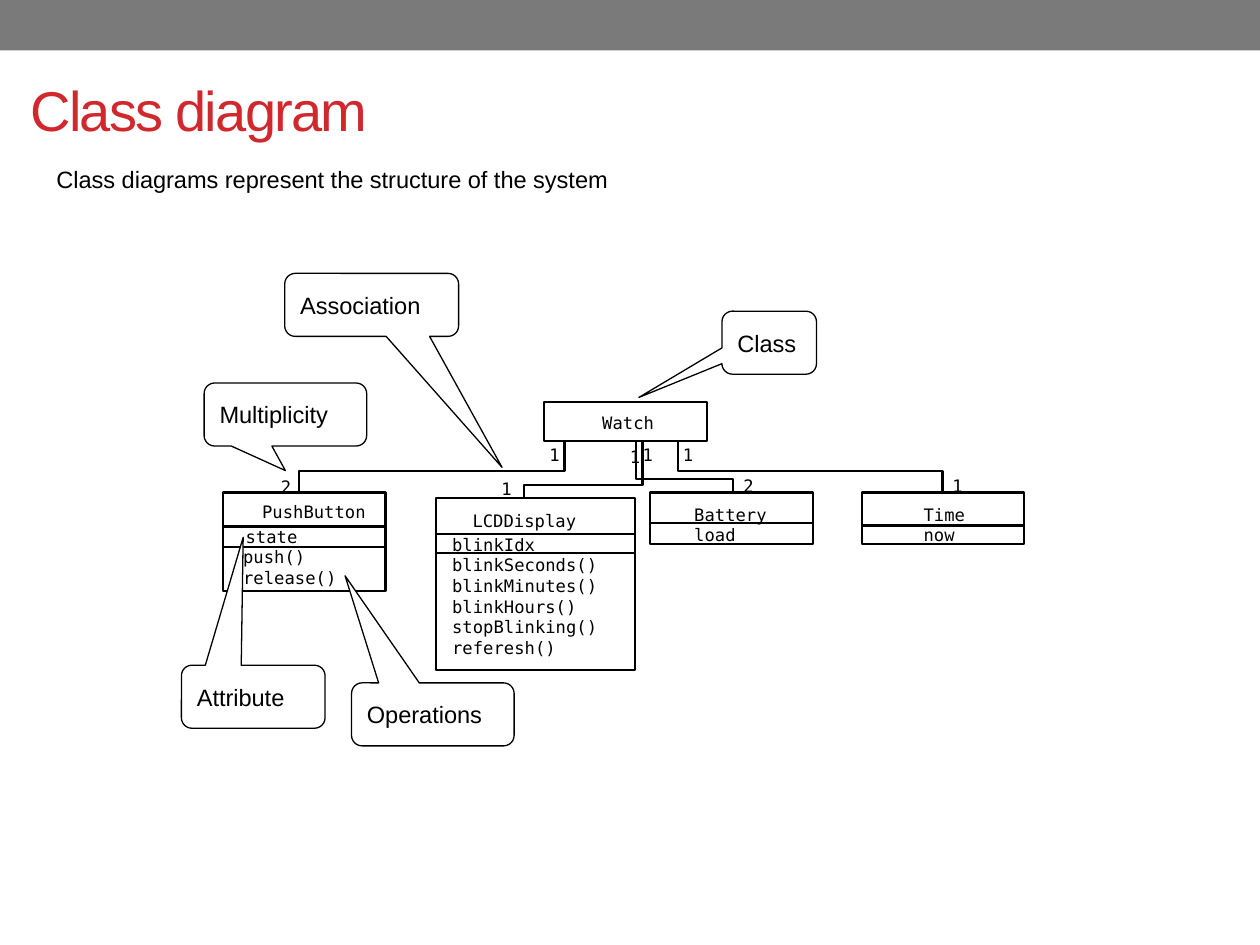
from itertools import pairwise

from pptx import Presentation
from pptx.dml.color import RGBColor
from pptx.enum.shapes import MSO_SHAPE
from pptx.enum.text import MSO_ANCHOR, MSO_AUTO_SIZE, PP_ALIGN
from pptx.util import Cm, Pt

RECTANGLE = MSO_SHAPE.RECTANGLE
CALLOUT = MSO_SHAPE.ROUNDED_RECTANGULAR_CALLOUT
MIDDLE, TOP = MSO_ANCHOR.MIDDLE, MSO_ANCHOR.TOP
LEFT = PP_ALIGN.LEFT
FIT_SHAPE, NO_FIT = MSO_AUTO_SIZE.SHAPE_TO_FIT_TEXT, MSO_AUTO_SIZE.NONE
SANS, MONO = "Arial", "DejaVu Sans Mono"
BLACK, WHITE, GREY, RED = "000000", "FFFFFF", "7A7A7A", "D1282E"

# Content; all places are in inches
TITLE = "Class diagram"
SUBTITLE = "Class diagrams represent the structure of the system"

# Class boxes: left, width, top and bottom edges of the compartments
CLASSES = [
    (4.32, 1.29, [3.19, 3.5]),               # Watch
    (1.77, 1.29, [3.91, 4.18, 4.34, 4.69]),  # PushButton
    (3.46, 1.58, [3.95, 4.24, 4.39, 5.32]),  # LCDDisplay
    (5.16, 1.29, [3.91, 4.15, 4.32]),        # Battery
    (6.84, 1.29, [3.91, 4.17, 4.32]),        # Time
]
# Associations: part x, part top, bend y, Watch x, Watch bottom
ASSOCIATIONS = [
    (2.37, 3.9, 3.74, 4.48, 3.49),
    (4.16, 3.95, 3.85, 5.1, 3.51),
    (5.82, 3.9, 3.8, 5.05, 3.51),
    (7.48, 3.9, 3.74, 5.38, 3.49),
]
# Class text and multiplicities: text, left, top, width, height
LABELS = [
    ("Watch", 4.78, 3.27, 0.44, 0.16),
    ("PushButton", 2.08, 3.98, 0.85, 0.16),
    ("state", 1.95, 4.18, 0.44, 0.16),
    ("push()\vrelease()", 1.93, 4.34, 0.76, 0.33),
    ("LCDDisplay", 3.75, 4.05, 0.85, 0.16),
    ("Battery\nload", 5.51, 4, 0.6, 0.33),
    ("Time\nnow", 7.33, 4, 0.35, 0.33),
    ("1", 4.36, 3.53, 0.1, 0.16),
    ("2", 2.23, 3.78, 0.1, 0.16),
    ("1", 5, 3.54, 0.1, 0.16),
    ("1", 3.98, 3.8, 0.1, 0.16),
    ("1", 5.1, 3.53, 0.1, 0.16),
    ("2", 5.9, 3.77, 0.1, 0.16),
    ("1", 5.42, 3.53, 0.1, 0.16),
    ("1", 7.56, 3.77, 0.1, 0.16),
]
LCD_MEMBERS = ("blinkIdx\nblinkSeconds()\nblinkMinutes()\nblinkHours()\n"
               "stopBlinking()\nreferesh()")
# Callouts: text, left, top, width, tip offset as a share of the size
CALLOUTS = [
    ("Class", 5.73, 2.47, 0.75, -1.38, 0.87),
    ("Association", 2.26, 2.17, 1.38, 0.75, 2.58),
    ("Multiplicity", 1.62, 3.04, 1.29, 0, 0.89),
    ("Attribute", 1.44, 5.28, 1.14, -0.07, -2.53),
    ("Operations", 2.79, 5.42, 1.29, -0.54, -2.2),
]
CALLOUT_HEIGHT = 0.5


def inches(*values):
    return [Cm(value * 2.54) for value in values]


def colour(code):
    return RGBColor.from_string(code)


def paint(shape, fill=None, line=None, weight=1.25):
    shape.shadow.inherit = False
    if fill:
        shape.fill.solid()
        shape.fill.fore_color.rgb = colour(fill)
    else:
        shape.fill.background()
    if line:
        shape.line.color.rgb = colour(line)
        shape.line.width = Pt(weight)
    else:
        shape.line.fill.background()


def write(shape, text, size, font, code=BLACK, anchor=MIDDLE, wrap=True):
    frame = shape.text_frame
    frame.text = text
    frame.word_wrap = wrap
    frame.vertical_anchor = anchor
    for para in frame.paragraphs:
        para.alignment = LEFT
        for span in para.runs:
            span.font.size = Pt(size)
            span.font.name = font
            span.font.color.rgb = colour(code)
    return frame


deck = Presentation()
deck.slide_width, deck.slide_height = inches(10, 7.5)
page = deck.slides.add_slide(deck.slide_layouts[5])
shapes = page.shapes

# Top band, title and subtitle
band = shapes.add_shape(RECTANGLE, *inches(0, 0, 10, 0.4))
paint(band, GREY)
title = shapes.title
title.left, title.top, title.width, title.height = inches(0.14, 0.32, 8.62, 1.09)
frame = write(title, TITLE, 32, SANS, RED)
frame.paragraphs[0].runs[0].font._element.set("spc", "-100")
subtitle = shapes.add_textbox(*inches(0.35, 1.26, 4.64, 0.33))
write(subtitle, SUBTITLE, 13.5, SANS, wrap=False).auto_size = FIT_SHAPE

# Association lines
for part_x, part_top, bend_y, watch_x, watch_bottom in ASSOCIATIONS:
    builder = shapes.build_freeform(*inches(part_x, part_top))
    corners = [(part_x, bend_y), (watch_x, bend_y), (watch_x, watch_bottom)]
    builder.add_line_segments([inches(*corner) for corner in corners], close=False)
    paint(builder.convert_to_shape(), line=BLACK)

# Class compartments
for left, width, edges in CLASSES:
    for top, bottom in pairwise(edges):
        compartment = shapes.add_shape(RECTANGLE, *inches(left, top, width, bottom - top))
        paint(compartment, line=BLACK)

# Class text and multiplicities
for text, *place in LABELS:
    label = shapes.add_textbox(*inches(*place))
    frame = write(label, text, 9.8, MONO, anchor=TOP, wrap=False)
    frame.margin_left = frame.margin_right = frame.margin_top = frame.margin_bottom = 0
    frame.auto_size = FIT_SHAPE
members = shapes.add_textbox(*inches(3.49, 4.19, 1.57, 1.72))
write(members, LCD_MEMBERS, 9.8, MONO, anchor=TOP).auto_size = NO_FIT

# Callouts
for text, left, top, width, tip_x, tip_y in CALLOUTS:
    callout = shapes.add_shape(CALLOUT, *inches(left, top, width, CALLOUT_HEIGHT))
    callout.adjustments[0] = tip_x
    callout.adjustments[1] = tip_y
    paint(callout, WHITE, BLACK, 0.75)
    write(callout, text, 13.5, SANS)

deck.save("out.pptx")
